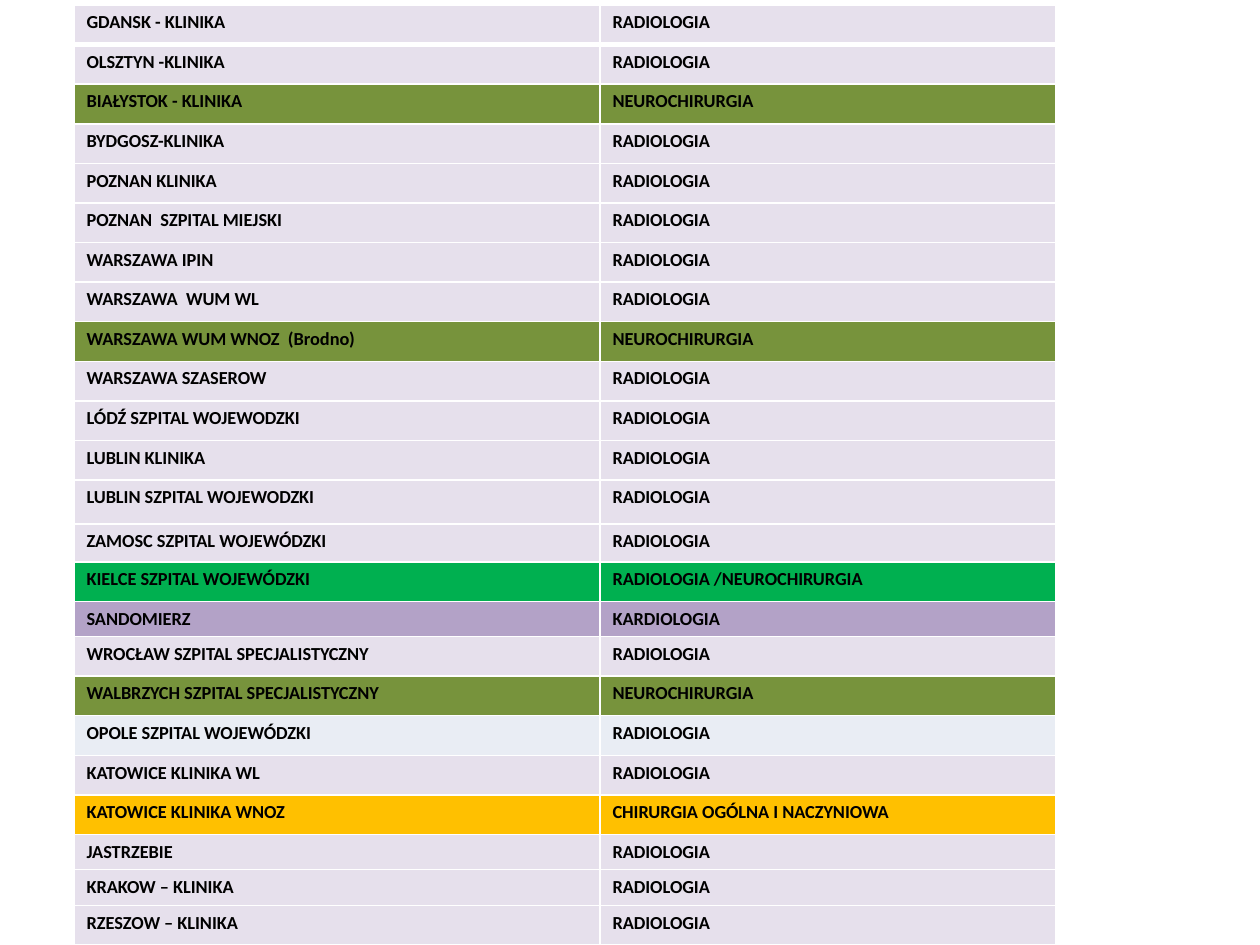
from pptx import Presentation
from pptx.dml.color import RGBColor
from pptx.oxml import parse_xml
from pptx.oxml.ns import nsdecls
from pptx.util import Emu, Pt

PX = 914400 / 126
BLANK = 6


class Theme:
    font, size, text = "Calibri", 10.5, "000000"
    border, line, header_line = "FFFFFF", 1, 3
    lilac, olive, green = "E6E0EC", "77933C", "00B050"
    violet, pale, amber = "B3A2C7", "E9EDF4", "FFC000"


RAD, NEURO = "RADIOLOGIA", "NEUROCHIRURGIA"
DEPARTMENT_FILLS = {
    RAD: Theme.lilac,
    NEURO: Theme.olive,
    "RADIOLOGIA /NEUROCHIRURGIA": Theme.green,
    "KARDIOLOGIA": Theme.violet,
    "CHIRURGIA OGÓLNA I NACZYNIOWA": Theme.amber,
}
HOSPITAL_FILLS = {"OPOLE SZPITAL WOJEWÓDZKI": Theme.pale}

HOSPITALS = [
    ("GDANSK - KLINIKA", RAD),
    ("OLSZTYN -KLINIKA", RAD),
    ("BIAŁYSTOK - KLINIKA", NEURO),
    ("BYDGOSZ-KLINIKA", RAD),
    ("POZNAN KLINIKA", RAD),
    ("POZNAN  SZPITAL MIEJSKI", RAD),
    ("WARSZAWA IPIN", RAD),
    ("WARSZAWA  WUM WL", RAD),
    ("WARSZAWA WUM WNOZ  (Brodno)", NEURO),
    ("WARSZAWA SZASEROW", RAD),
    ("LÓDŹ SZPITAL WOJEWODZKI", RAD),
    ("LUBLIN KLINIKA", RAD),
    ("LUBLIN SZPITAL WOJEWODZKI", RAD),
    ("ZAMOSC SZPITAL WOJEWÓDZKI", RAD),
    ("KIELCE SZPITAL WOJEWÓDZKI", "RADIOLOGIA /NEUROCHIRURGIA"),
    ("SANDOMIERZ", "KARDIOLOGIA"),
    ("WROCŁAW SZPITAL SPECJALISTYCZNY", RAD),
    ("WALBRZYCH SZPITAL SPECJALISTYCZNY", NEURO),
    ("OPOLE SZPITAL WOJEWÓDZKI", RAD),
    ("KATOWICE KLINIKA WL", RAD),
    ("KATOWICE KLINIKA WNOZ", "CHIRURGIA OGÓLNA I NACZYNIOWA"),
    ("JASTRZEBIE", RAD),
    ("KRAKOW – KLINIKA", RAD),
    ("RZESZOW – KLINIKA", RAD),
]
COLUMN_WIDTHS = [526, 456]
# Rows not named here share the remaining height equally.
ROW_HEIGHTS = {
    "LUBLIN SZPITAL WOJEWODZKI": 44,
    "ZAMOSC SZPITAL WOJEWÓDZKI": 38,
    "SANDOMIERZ": 35,
    "JASTRZEBIE": 35,
    "KRAKOW – KLINIKA": 36,
}


def px(n):
    return Emu(round(n * PX))


def set_borders(cell, widths):
    """Draw the cell's edges; widths maps L, R, T, B to points."""
    tcPr = cell._tc.get_or_add_tcPr()
    for i, (side, width) in enumerate(widths.items()):
        tcPr.insert(i, parse_xml(
            f'<a:ln{side} {nsdecls("a")} w="{Pt(width)}"><a:solidFill>'
            f'<a:srgbClr val="{Theme.border}"/></a:solidFill></a:ln{side}>'))


def fill_cell(cell, text, fill, widths):
    cell.fill.solid()
    cell.fill.fore_color.rgb = RGBColor.from_string(fill)
    set_borders(cell, widths)
    r = cell.text_frame.paragraphs[0].add_run()
    r.text = text
    formats = {"name": Theme.font, "size": Pt(Theme.size), "bold": True}
    for name, value in formats.items():
        setattr(r.font, name, value)
    r.font.color.rgb = RGBColor.from_string(Theme.text)


def add_hospital_table(slide, x, y, w, h):
    table = slide.shapes.add_table(
        len(HOSPITALS), len(COLUMN_WIDTHS), px(x), px(y), px(w), px(h)).table
    for column, width in zip(table.columns, COLUMN_WIDTHS):
        column.width = px(width)
    shared = (h - sum(ROW_HEIGHTS.values())) / (len(HOSPITALS) - len(ROW_HEIGHTS))
    for i, (hospital, department) in enumerate(HOSPITALS):
        table.rows[i].height = px(ROW_HEIGHTS.get(hospital, shared))
        fill = HOSPITAL_FILLS.get(hospital, DEPARTMENT_FILLS[department])
        widths = dict.fromkeys("LRTB", Theme.line)
        if i == 0:
            widths["B"] = Theme.header_line
        elif i == 1:
            widths["T"] = Theme.header_line
        for j, text in enumerate((hospital, department)):
            fill_cell(table.cell(i, j), text, fill, widths)


def main():
    prs = Presentation()
    prs.slide_width, prs.slide_height = px(1260), px(945)
    slide = prs.slides.add_slide(prs.slide_layouts[BLANK])
    add_hospital_table(slide, 74, 5, sum(COLUMN_WIDTHS), 941)
    prs.save("out.pptx")


if __name__ == "__main__":
    main()
